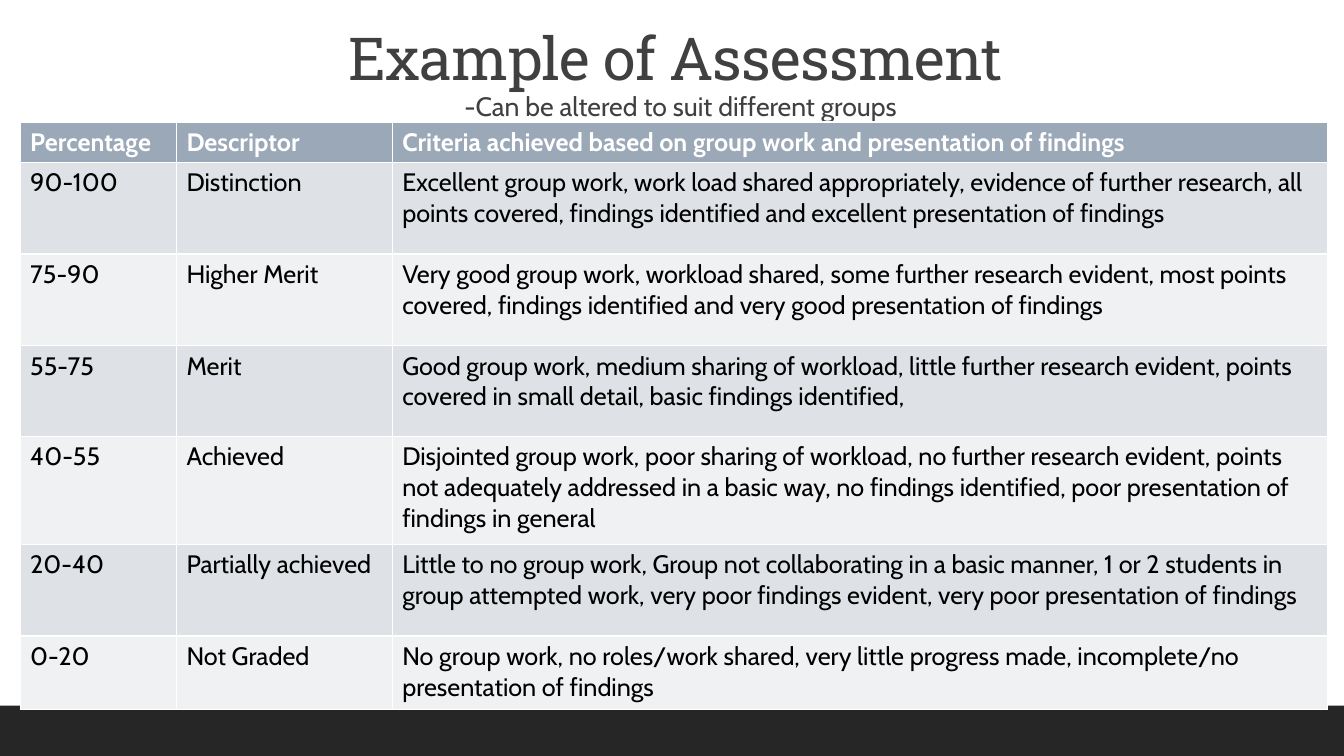
"""Builds the assessment rubric slide."""
from pptx import Presentation
from pptx.dml.color import RGBColor
from pptx.enum.shapes import MSO_SHAPE
from pptx.enum.text import MSO_ANCHOR, PP_ALIGN
from pptx.util import Pt

SCALE = 9144
INK = {
    "text": "404040", "foot": "262626", "head": "9BA8B7",
    "odd": "DEE1E6", "even": "EFF1F3", "white": "FFFFFF", "black": "000000",
}
WIDTHS = [155, 214, 928]
HEIGHTS = [40, 91, 91, 90, 107, 91, 73]
ROWS = [
    ("Percentage", "Descriptor",
     "Criteria achieved based on group work and presentation of findings"),
    ("90-100", "Distinction",
     "Excellent group work, work load shared appropriately, evidence of further research, "
     "all points covered, findings identified and excellent presentation of findings"),
    ("75-90", "Higher Merit",
     "Very good group work, workload shared, some further research evident, most points "
     "covered, findings identified and very good presentation of findings"),
    ("55-75", "Merit",
     "Good group work, medium sharing of workload, little further research evident, points "
     "covered in small detail, basic findings identified,"),
    ("40-55", "Achieved",
     "Disjointed group work, poor sharing of workload, no further research evident, points "
     "not adequately addressed in a basic way, no findings identified, poor presentation "
     "of findings in general"),
    ("20-40", "Partially achieved",
     "Little to no group work, Group not collaborating in a basic manner, 1 or 2 students "
     "in group attempted work, very poor findings evident, very poor presentation of findings"),
    ("0-20", "Not Graded",
     "No group work, no roles/work shared, very little progress made, incomplete/no "
     "presentation of findings"),
]


def px(*sizes):
    return [size * SCALE for size in sizes]


class Deck:
    def __init__(self, slide, font):
        self.slide = slide
        self.font = font

    def paint(self, fill, ink):
        fill.solid()
        fill.fore_color.rgb = RGBColor.from_string(INK[ink])

    def add_words(self, para, words, size, ink, font=None, bold=False):
        run = para.add_run()
        run.text = words
        run.font.name = font or self.font
        run.font.size = Pt(size)
        run.font.bold = bold
        run.font.color.rgb = RGBColor.from_string(INK[ink])
        return run

    def bar(self, box, ink):
        shape = self.slide.shapes.add_shape(MSO_SHAPE.RECTANGLE, *px(*box))
        shape.shadow.inherit = False
        shape.line.fill.background()
        self.paint(shape.fill, ink)

    def label(self, box, words, size, font=None, space=1.0, anchor=MSO_ANCHOR.TOP):
        frame = self.slide.shapes.add_textbox(*px(*box)).text_frame
        frame.word_wrap = True
        frame.vertical_anchor = anchor
        para = frame.paragraphs[0]
        para.alignment = PP_ALIGN.CENTER
        para.line_spacing = space
        return para, self.add_words(para, words, size, "text", font)

    def grid(self, left, top, rows, widths, heights):
        box = px(left, top, sum(widths), sum(heights))
        table = self.slide.shapes.add_table(len(rows), len(widths), *box).table
        for col, width in zip(table.columns, px(*widths)):
            col.width = width
        for row, height in zip(table.rows, px(*heights)):
            row.height = height
        for r, row in enumerate(rows):
            head = r == 0
            fill = "head" if head else "odd" if r % 2 else "even"
            for c, words in enumerate(row):
                cell = table.cell(r, c)
                self.paint(cell.fill, fill)
                self.add_words(cell.text_frame.paragraphs[0], words, 18,
                               "white" if head else "black", bold=head)


def main():
    show = Presentation()
    show.slide_width, show.slide_height = px(1333, 750)
    deck = Deck(show.slides.add_slide(show.slide_layouts[6]), "Cabin")
    deck.bar((0, 700, 1333, 50), "foot")
    _, title = deck.label((120, 31, 1100, 67), "Example of Assessment", 42.3,
                          "Roboto Slab", 0.9, MSO_ANCHOR.BOTTOM)
    title.font._element.set("spc", "-50")
    para, _ = deck.label((120, 81, 1100, 411),
                         "-Can be altered to suit different groups", 19, space=1.1)
    para._p.get_or_add_pPr().set("marL", str(10 * SCALE))
    deck.grid(20, 121, ROWS, WIDTHS, HEIGHTS)
    show.save("out.pptx")


if __name__ == "__main__":
    main()
